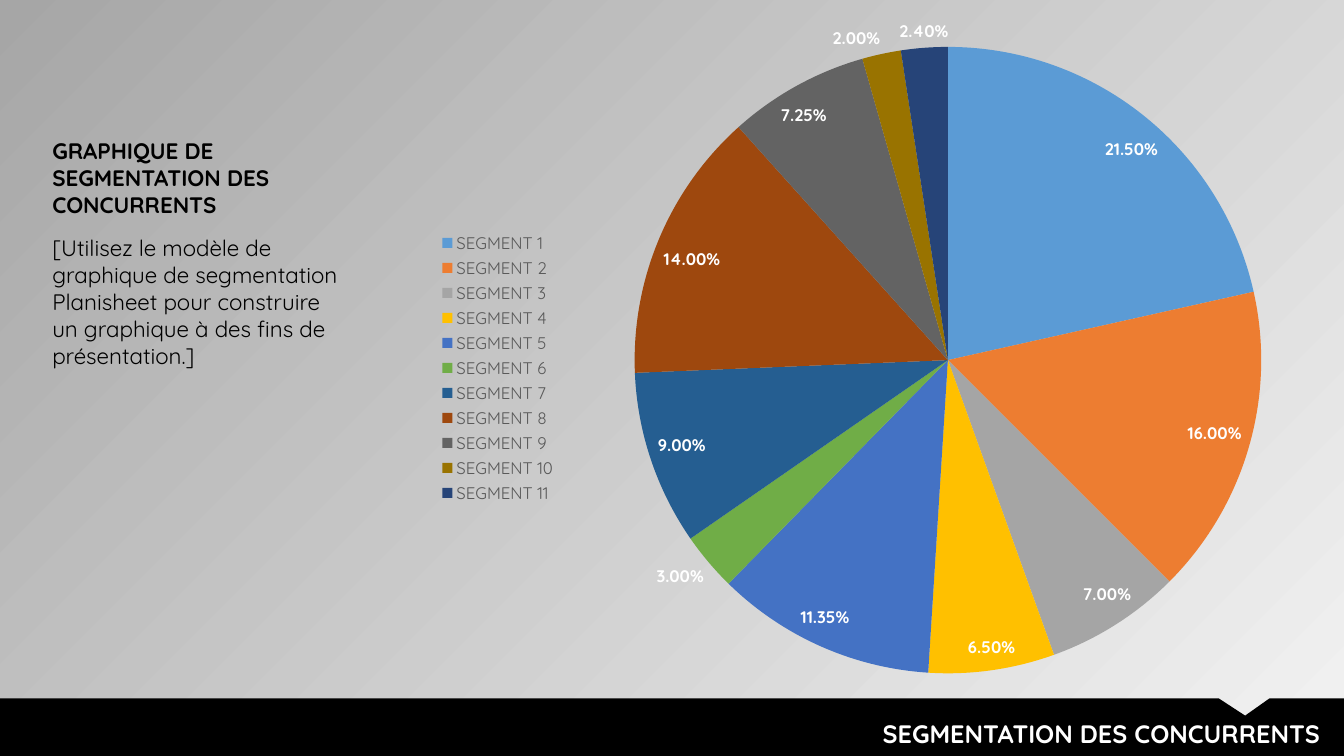
from lxml.etree import SubElement
from pptx import Presentation
from pptx.chart.data import CategoryChartData
from pptx.dml.color import RGBColor
from pptx.enum.chart import XL_CHART_TYPE, XL_LABEL_POSITION, XL_LEGEND_POSITION
from pptx.enum.text import MSO_ANCHOR, PP_ALIGN
from pptx.oxml import parse_xml
from pptx.oxml.ns import nsdecls, qn
from pptx.util import Inches, Pt

FONT = "Quicksand"
COLORS = {
    "black": "000000",
    "white": "FFFFFF",
    "legend": "595959",
    "background light": "F2F2F2",
    "background dark": "A6A6A6",
}
# Share and colour of each segment, clockwise from the top
SEGMENTS = [
    (0.215, "5B9BD5"),
    (0.16, "ED7D31"),
    (0.07, "A5A5A5"),
    (0.065, "FFC000"),
    (0.1135, "4472C4"),
    (0.03, "70AD47"),
    (0.09, "255E91"),
    (0.14, "9E480E"),
    (0.0725, "636363"),
    (0.02, "997300"),
    (0.024, "264478"),
]
PLOT_LAYOUT = {"x": 0.244, "y": 0.065, "w": 0.749, "h": 0.849}


def color(name):
    return RGBColor.from_string(COLORS[name])


def set_font(font, size, color_name, bold=False):
    font.name = FONT
    font.size = Pt(size)
    font.bold = bold
    font.color.rgb = color(color_name)


def paint_background(page):
    fill = page.background.fill
    fill.gradient()
    fill.gradient_angle = 135
    for stop, position, name in zip(
        fill.gradient_stops, (0, 1), ("background light", "background dark")
    ):
        stop.position = position
        stop.color.rgb = color(name)
    # The light end is partly transparent
    light = next(page.background._cSld.iter(qn("a:srgbClr")))
    SubElement(light, qn("a:alpha"), val="40000")


def add_text(page, left, top, width, height):
    box = page.shapes.add_textbox(
        Inches(left), Inches(top), Inches(width), Inches(height)
    )
    box.text_frame.word_wrap = True
    return box.text_frame


def add_footer(page, left, top, width, height):
    # Black band with a notch in its upper edge
    right, bottom = left + width, top + height
    outline = [
        (right - 1.24, top),
        (right - 0.98, top + 0.17),
        (right - 0.74, top),
        (right, top),
        (right, bottom),
        (left, bottom),
    ]
    builder = page.shapes.build_freeform(Inches(left), Inches(top))
    builder.add_line_segments([(Inches(x), Inches(y)) for x, y in outline])
    band = builder.convert_to_shape()
    band.shadow.inherit = False
    band.fill.solid()
    band.fill.fore_color.rgb = color("black")
    band.line.fill.background()

    # Slide title
    frame = add_text(page, right - 6.92, top + 0.15, 6.78, 0.4)
    para = frame.paragraphs[0]
    para.text = "SEGMENTATION DES CONCURRENTS"
    para.alignment = PP_ALIGN.RIGHT
    set_font(para.font, 18, "white", bold=True)


def add_description(page, left, top, width, height):
    frame = add_text(page, left, top, width, height)
    frame.vertical_anchor = MSO_ANCHOR.TOP
    frame.margin_top = Inches(0.02)
    heading = frame.paragraphs[0]
    heading.text = "GRAPHIQUE DE SEGMENTATION DES CONCURRENTS"
    body = frame.add_paragraph()
    body.text = (
        "[Utilisez le modèle de graphique de segmentation Planisheet "
        "pour construire un graphique à des fins de présentation.]"
    )
    for para in (heading, body):
        para.space_after = Pt(12)
        set_font(para.font, 16, "black", bold=para is heading)


def set_plot_layout(chart):
    plot_area = chart._chartSpace.chart.plotArea
    for layout in plot_area.findall(qn("c:layout")):
        plot_area.remove(layout)
    sizes = "".join(f'<c:{key} val="{value}"/>' for key, value in PLOT_LAYOUT.items())
    plot_area.insert(0, parse_xml(
        f'<c:layout {nsdecls("c")}><c:manualLayout>'
        '<c:layoutTarget val="inner"/><c:xMode val="edge"/><c:yMode val="edge"/>'
        f"{sizes}</c:manualLayout></c:layout>"
    ))


def add_segment_chart(page, left, top, width, height):
    data = CategoryChartData(number_format="0.00%")
    data.categories = [f"SEGMENT {n}" for n in range(1, len(SEGMENTS) + 1)]
    data.add_series("Series 1", [share for share, _ in SEGMENTS])
    chart = page.shapes.add_chart(
        XL_CHART_TYPE.PIE,
        Inches(left), Inches(top), Inches(width), Inches(height),
        data,
    ).chart
    chart.has_title = False
    set_font(chart.font, 12, "black")
    set_plot_layout(chart)

    # Legend
    chart.has_legend = True
    chart.legend.position = XL_LEGEND_POSITION.LEFT
    chart.legend.include_in_layout = False
    set_font(chart.legend.font, 12, "legend")

    # Slices and their labels
    plot = chart.plots[0]
    plot.vary_by_categories = True
    for index, (_, slice_color) in enumerate(SEGMENTS):
        fill = plot.series[0].points[index].format.fill
        fill.solid()
        fill.fore_color.rgb = RGBColor.from_string(slice_color)
    labels = plot.series[0].data_labels
    labels.show_value = True
    labels.show_percentage = False
    labels.number_format = "0.00%"
    labels.number_format_is_linked = False
    labels.position = XL_LABEL_POSITION.BEST_FIT
    set_font(labels.font, 12, "white", bold=True)


def main():
    deck = Presentation()
    deck.slide_width, deck.slide_height = Inches(13.33), Inches(7.5)
    page = deck.slides.add_slide(deck.slide_layouts[6])
    paint_background(page)
    add_footer(page, 0, 6.93, 13.33, 0.57)
    add_segment_chart(page, 4.25, -0.01, 8.33, 7.32)
    add_description(page, 0.42, 1.34, 3.08, 2.77)
    deck.save("out.pptx")


if __name__ == "__main__":
    main()
